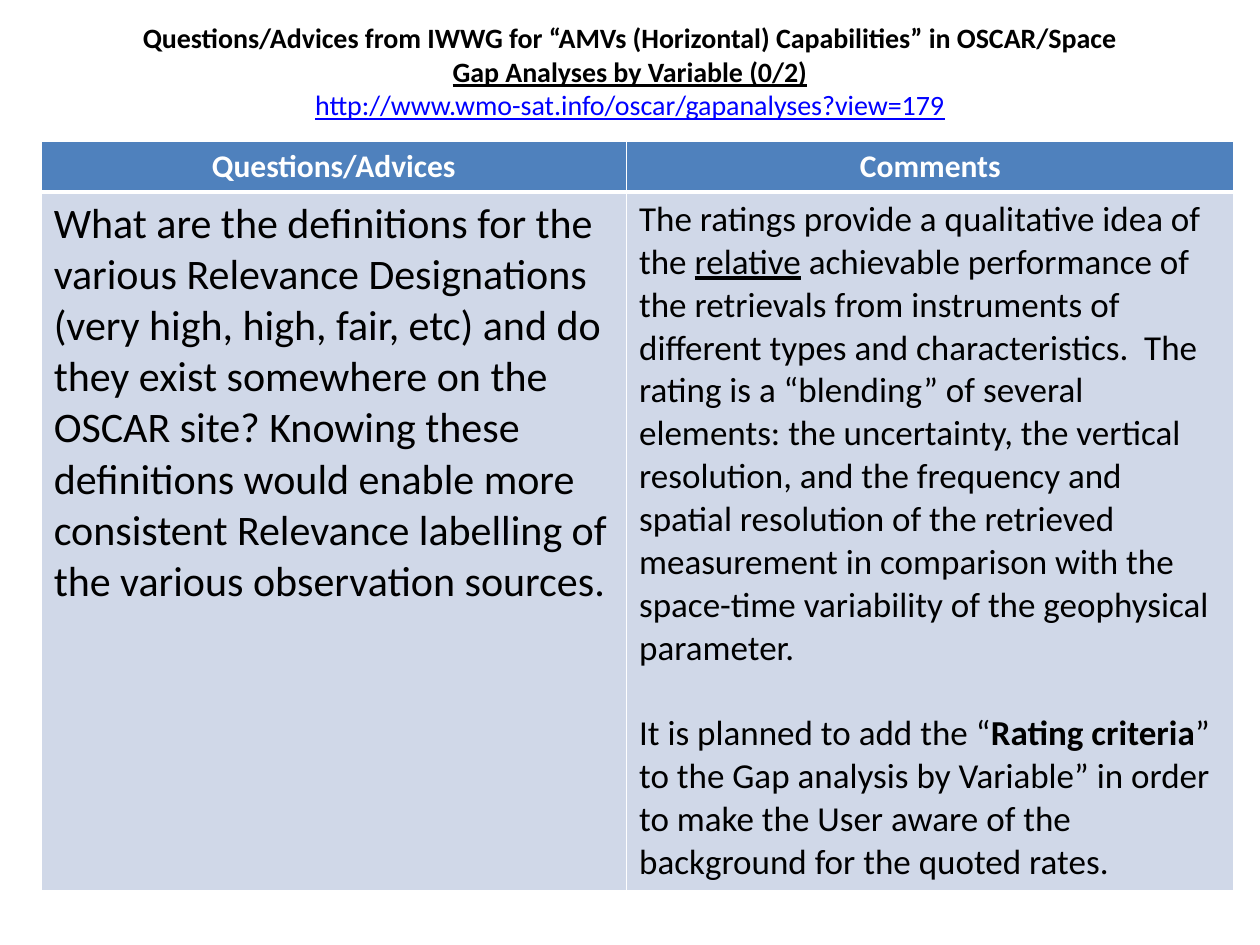
from lxml.etree import SubElement
from pptx import Presentation
from pptx.dml.color import RGBColor
from pptx.enum.text import MSO_ANCHOR, PP_ALIGN
from pptx.oxml.ns import qn
from pptx.util import Cm, Pt

BLACK = RGBColor(0x00, 0x00, 0x00)
WHITE = RGBColor(0xFF, 0xFF, 0xFF)
LINK_BLUE = RGBColor(0x00, 0x00, 0xFF)
HEADER_BLUE = RGBColor(0x4F, 0x81, 0xBD)
BODY_BLUE = RGBColor(0xD0, 0xD8, 0xE8)

TITLE = [[
    ("Questions/Advices from IWWG for “AMVs (Horizontal) Capabilities” in OSCAR/Space", {"bold": True}),
    ("Gap Analyses by Variable (0/2)", {"bold": True, "underline": True}),
    ("http://www.wmo-sat.info/oscar/gapanalyses?view=179", {"underline": True, "color": LINK_BLUE}),
]]
HEADERS = ["Questions/Advices", "Comments"]
QUESTION = [[(
    "What are the definitions for the various Relevance Designations (very high, high, fair, etc) "
    "and do they exist somewhere on the OSCAR site? Knowing these definitions would enable more "
    "consistent Relevance labelling of the various observation sources.", {})]]
COMMENT = [
    [("The ratings provide a qualitative idea of the ", {}),
     ("relative", {"underline": True}),
     (" achievable performance of the retrievals from instruments of different types and "
      "characteristics.  The rating is a “blending” of several elements: the uncertainty, the "
      "vertical resolution, and the frequency and spatial resolution of the retrieved measurement "
      "in comparison with the space-time variability of the geophysical parameter.", {})],
    [("It is planned to add the “", {}),
     ("Rating criteria", {"bold": True}),
     ("” to the Gap analysis by Variable” in order to make the User aware of the background "
      "for the quoted rates.", {})],
]


class SlideBuilder:
    def __init__(self, slide, font_name="Calibri"):
        self.slide = slide
        self.font_name = font_name

    def add_text(self, frame, paragraphs, size, color=BLACK, align=PP_ALIGN.LEFT,
                 gap=0, break_spans=False):
        """Fill a text frame with paragraphs, each a list of (text, format) spans."""
        frame.word_wrap = True
        for index, spans in enumerate(paragraphs):
            para = frame.add_paragraph() if index else frame.paragraphs[0]
            para.alignment = align
            if index:
                para.space_before = Pt(gap)
            for position, (text, extra) in enumerate(spans):
                if position and break_spans:
                    para.add_line_break()
                span = para.add_run()
                span.text = text
                style = {"name": self.font_name, "size": Pt(size), "bold": False,
                         "color": color, **extra}
                span.font.color.rgb = style.pop("color")
                for name, value in style.items():
                    setattr(span.font, name, value)

    def title(self, paragraphs, left, top, width, height):
        box = self.slide.shapes.add_textbox(left, top, width, height)
        box.text_frame.vertical_anchor = MSO_ANCHOR.MIDDLE
        self.add_text(box.text_frame, paragraphs, 16, align=PP_ALIGN.CENTER, break_spans=True)

    def table(self, left, top, widths, heights):
        frame = self.slide.shapes.add_table(
            len(heights), len(widths), left, top, sum(widths), sum(heights))
        table = frame.table
        for column, width in zip(table.columns, widths):
            column.width = width
        for row, height in zip(table.rows, heights):
            row.height = height
        return table

    def cell(self, cell, paragraphs, fill, borders, **text_style):
        """Borders are widths in points for the left, right, top and bottom sides."""
        properties = cell._tc.get_or_add_tcPr()
        for side, width in zip("LRTB", borders):
            line = SubElement(properties, qn(f"a:ln{side}"), w=str(Pt(width)))
            SubElement(SubElement(line, qn("a:solidFill")), qn("a:srgbClr"), val=str(WHITE))
        cell.fill.solid()
        cell.fill.fore_color.rgb = fill
        self.add_text(cell.text_frame, paragraphs, **text_style)


def main():
    deck = Presentation()
    deck.slide_width, deck.slide_height = Cm(25.4), Cm(19.05)
    page = SlideBuilder(deck.slides.add_slide(deck.slide_layouts[6]))

    page.title(TITLE, Cm(1.27), Cm(0.05), Cm(22.86), Cm(2.77))
    table = page.table(Cm(0.83), Cm(2.85), [Cm(11.8), Cm(12.25)], [Cm(1), Cm(14.08)])
    for column, header in enumerate(HEADERS):
        page.cell(table.cell(0, column), [[(header, {"bold": True})]], HEADER_BLUE,
                  (1, 1, 1, 3), size=18, color=WHITE, align=PP_ALIGN.CENTER)
    for column, (paragraphs, size) in enumerate([(QUESTION, 24), (COMMENT, 20)]):
        page.cell(table.cell(1, column), paragraphs, BODY_BLUE,
                  (1, 1, 3, 1), size=size, gap=24.4)
    deck.save("out.pptx")


if __name__ == "__main__":
    main()
